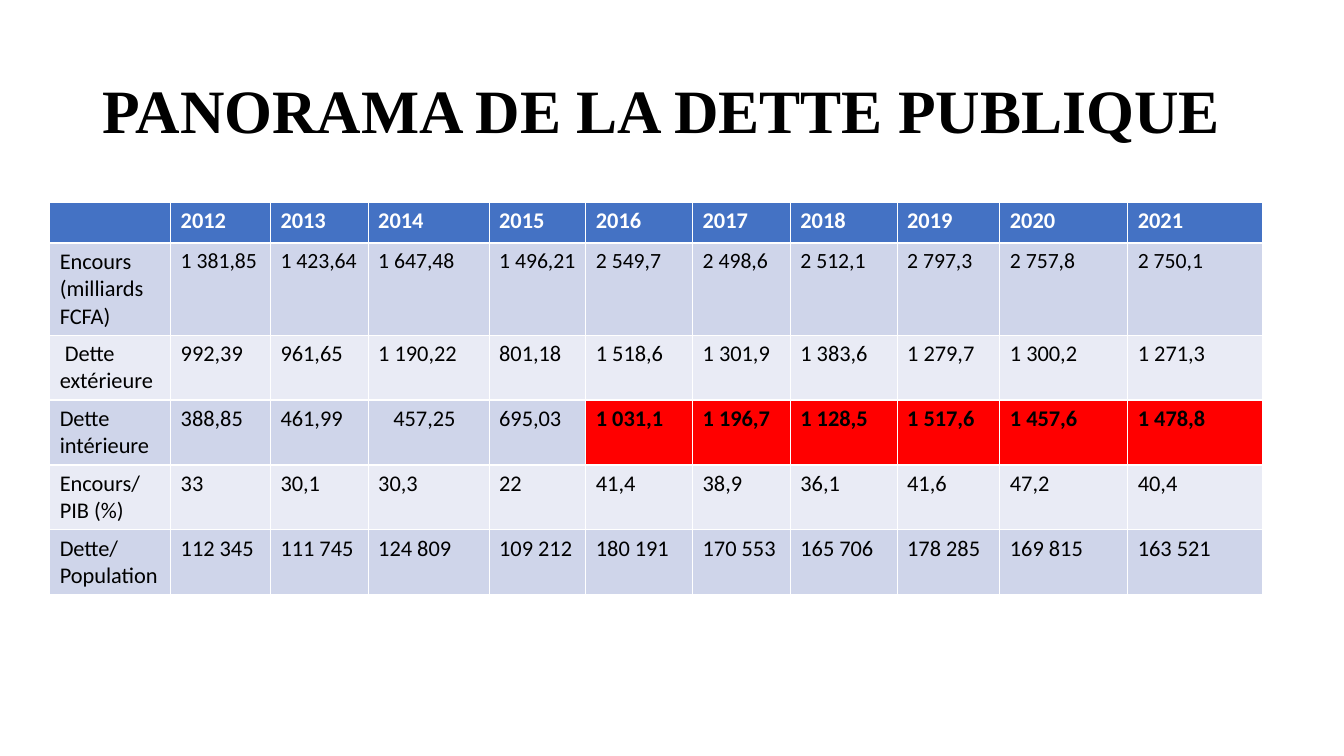
from pptx import Presentation
from pptx.dml.color import RGBColor
from pptx.enum.text import MSO_ANCHOR, PP_ALIGN
from pptx.util import Pt

LEFT = PP_ALIGN.LEFT
MIDDLE = MSO_ANCHOR.MIDDLE
TITLE_ONLY = 5

BLACK, WHITE, RED = "000000", "FFFFFF", "FF0000"
HEAD, BANDS = "4472C4", ("CFD5EA", "E9EBF5")

COLS = [86.4, 71.3, 69.8, 86.4, 69.1, 76.3, 69.8, 76.3, 73.4, 91.4, 96.5]
ROW = 29.2
ROWS = [
    [""] + [str(year) for year in range(2012, 2022)],
    ["Encours (milliards FCFA)", "1 381,85", "1 423,64", "1 647,48", "1 496,21",
     "2 549,7", "2 498,6", "2 512,1", "2 797,3", "2 757,8", "2 750,1"],
    [" Dette extérieure", "992,39", "961,65", "1 190,22", "801,18",
     "1 518,6", "1 301,9", "1 383,6", "1 279,7", "1 300,2", "1 271,3"],
    ["Dette intérieure", "388,85", "461,99", "457,25", "695,03",
     "1 031,1", "1 196,7", "1 128,5", "1 517,6", "1 457,6", "1 478,8"],
    ["Encours/PIB (%)", "33", "30,1", "30,3", "22",
     "41,4", "38,9", "36,1", "41,6", "47,2", "40,4"],
    ["Dette/Population", "112 345", "111 745", "124 809", "109 212",
     "180 191", "170 553", "165 706", "178 285", "169 815", "163 521"],
]
TOTALS, HOME = 1, 3      # rows of total debt and domestic debt
ALERT = 5                # first column of the red range
INSET = (HOME, 3)        # the one indented figure


def color(code):
    return RGBColor.from_string(code)


def add_run(para, text, size, face, code, bold=False):
    run = para.add_run()
    run.text = text
    font = run.font
    font.size, font.name, font.bold = Pt(size), face, bold
    font.color.rgb = color(code)


def add_title(slide, box, text):
    title = slide.shapes.title
    title.left, title.top, title.width, title.height = map(Pt, box)
    title.text_frame.vertical_anchor = MIDDLE
    para = title.text_frame.paragraphs[0]
    para.alignment = LEFT
    para.line_spacing = 0.9
    add_run(para, text, 44, "Times New Roman", BLACK, True)


def add_debt(slide, box):
    x, y, width, height = map(Pt, box)
    frame = slide.shapes.add_table(len(ROWS), len(COLS), x, y, width, height)
    table = frame.table
    for col, size in zip(table.columns, COLS):
        col.width = Pt(size)
    for r, row in enumerate(ROWS):
        table.rows[r].height = Pt(ROW)
        for c, text in enumerate(row):
            cell = table.cell(r, c)
            head = r == 0
            alert = r == HOME and c >= ALERT
            fill = HEAD if head else RED if alert else BANDS[(r - 1) % 2]
            cell.fill.solid()
            cell.fill.fore_color.rgb = color(fill)
            if (r, c) == INSET:
                cell.margin_left = Pt(18)
            if text:
                size = 15.5 if r == TOTALS and c else 16
                add_run(cell.text_frame.paragraphs[0], text, size, "Calibri",
                        WHITE if head else BLACK, head or alert)
    # Rows grow with their text inside the full frame
    frame.height = height


def main():
    deck = Presentation()
    deck.slide_width, deck.slide_height = Pt(960), Pt(540)
    slide = deck.slides.add_slide(deck.slide_layouts[TITLE_ONLY])

    # Heading
    add_title(slide, (66, 28.8, 828, 104.4), "PANORAMA DE LA DETTE PUBLIQUE")

    # Debt by year
    add_debt(slide, (35.5, 144.3, sum(COLS), 276.5))

    deck.save("out.pptx")


if __name__ == "__main__":
    main()
